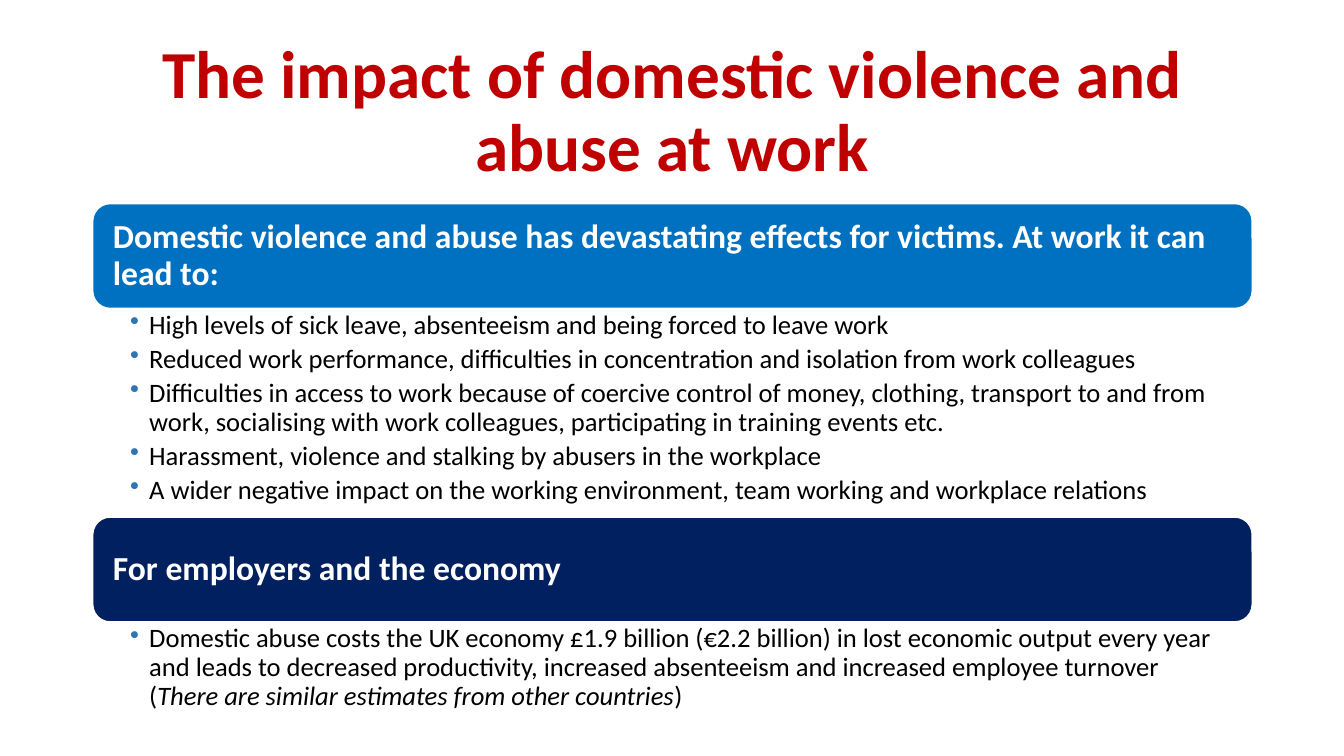
from dataclasses import dataclass

from lxml import etree
from pptx import Presentation
from pptx.dml.color import RGBColor
from pptx.enum.shapes import MSO_SHAPE
from pptx.enum.text import MSO_ANCHOR, PP_ALIGN
from pptx.oxml.ns import qn
from pptx.util import Inches, Pt

ROUND = MSO_SHAPE.ROUNDED_RECTANGLE
MIDDLE, TOP = MSO_ANCHOR.MIDDLE, MSO_ANCHOR.TOP
LEFT, CENTER = PP_ALIGN.LEFT, PP_ALIGN.CENTER


@dataclass(frozen=True)
class Theme:
    font: str = "Calibri"
    red: str = "C00000"
    blue: str = "0070C0"
    navy: str = "002060"
    white: str = "FFFFFF"
    black: str = "000000"
    dot: str = "2E75B6"
    title: float = 48
    head: float = 24
    body: float = 19


LEAD, WIDTH = 0.92, 11.5
BAR = 1.04
TITLE = "The impact of domestic violence and abuse at work"
# Each part: top, bar colour, heading, list height, points as (text, italic) runs
PARTS = [
    (2.02, Theme.blue,
     "Domestic violence and abuse has devastating effects for victims. "
     "At work it can lead to:",
     2.06,
     [[("High levels of sick leave, absenteeism and being forced to leave work", False)],
      [("Reduced work performance, difficulties in concentration and isolation "
        "from work colleagues", False)],
      [("Difficulties in access to work because of coercive control of money, "
        "clothing, transport to and from work, socialising with work colleagues, "
        "participating in training events etc.", False)],
      [("Harassment, violence and stalking by abusers in the workplace", False)],
      [("A wider negative impact on the working environment, team working and "
        "workplace relations", False)]]),
    (5.13, Theme.navy, "For employers and the economy", 0.95,
     [[("Domestic abuse costs the UK economy £1.9 billion (€2.2 billion) in lost "
        "economic output every year and leads to decreased productivity, increased "
        "absenteeism and increased employee turnover (", False),
       ("There are similar estimates from other countries", True),
       (")", False)]]),
]


class Deck:
    def __init__(self, theme):
        self.theme = theme
        self.show = Presentation()
        self.show.slide_width = Inches(13.33)
        self.show.slide_height = Inches(7.5)
        self.slide = self.show.slides.add_slide(self.show.slide_layouts[6])

    def style(self, run, size, color, bold=False, italic=False):
        font = run.font
        font.name, font.size = self.theme.font, Pt(size)
        font.bold, font.italic = bold, italic
        font.color.rgb = RGBColor.from_string(color)

    def frame(self, shape, anchor, pads):
        """Set wrapping, anchor and the left, top, right and bottom insets."""
        frame = shape.text_frame
        frame.word_wrap = True
        frame.vertical_anchor = anchor
        (frame.margin_left, frame.margin_top,
         frame.margin_right, frame.margin_bottom) = map(Inches, pads)
        return frame

    def line(self, frame, text, size, color, align):
        frame.text = text
        para = frame.paragraphs[0]
        para.alignment, para.line_spacing = align, 0.9
        self.style(para.runs[0], size, color, bold=True)

    def box(self, top, height):
        return self.slide.shapes.add_textbox(
            Inches(LEAD), Inches(top), Inches(WIDTH), Inches(height))

    def title(self, text):
        frame = self.frame(self.box(0.4, 1.45), MIDDLE, (0.1, 0.05, 0.1, 0.05))
        self.line(frame, text, self.theme.title, self.theme.red, CENTER)

    def bar(self, top, color, text):
        shape = self.slide.shapes.add_shape(
            ROUND, Inches(LEAD), Inches(top), Inches(WIDTH), Inches(BAR))
        shape.shadow.inherit = False
        shape.fill.solid()
        shape.fill.fore_color.rgb = RGBColor.from_string(color)
        shape.line.color.rgb = RGBColor.from_string(self.theme.white)
        shape.line.width = Pt(1)
        frame = self.frame(shape, MIDDLE, (0.15, 0.1, 0.15, 0.1))
        self.line(frame, text, self.theme.head, self.theme.white, LEFT)

    def bullet(self, para):
        props = para._p.get_or_add_pPr()
        props.set("marL", str(Inches(0.19)))
        props.set("indent", str(-Inches(0.19)))
        tint = etree.SubElement(props, qn("a:buClr"))
        etree.SubElement(tint, qn("a:srgbClr")).set("val", self.theme.dot)
        etree.SubElement(props, qn("a:buChar")).set("char", "•")

    def points(self, top, height, items):
        frame = self.frame(self.box(top, height), TOP, (0.37, 0.03, 0.19, 0.03))
        for i, item in enumerate(items):
            para = frame.add_paragraph() if i else frame.paragraphs[0]
            self.bullet(para)
            para.level = 1
            para.line_spacing, para.space_after = 0.9, Pt(3.8)
            for text, italic in item:
                run = para.add_run()
                run.text = text
                self.style(run, self.theme.body, self.theme.black, italic=italic)


def main():
    deck = Deck(Theme())
    deck.title(TITLE)
    for top, color, head, height, items in PARTS:
        deck.bar(top, color, head)
        deck.points(top + BAR, height, items)
    deck.show.save("out.pptx")


if __name__ == "__main__":
    main()
